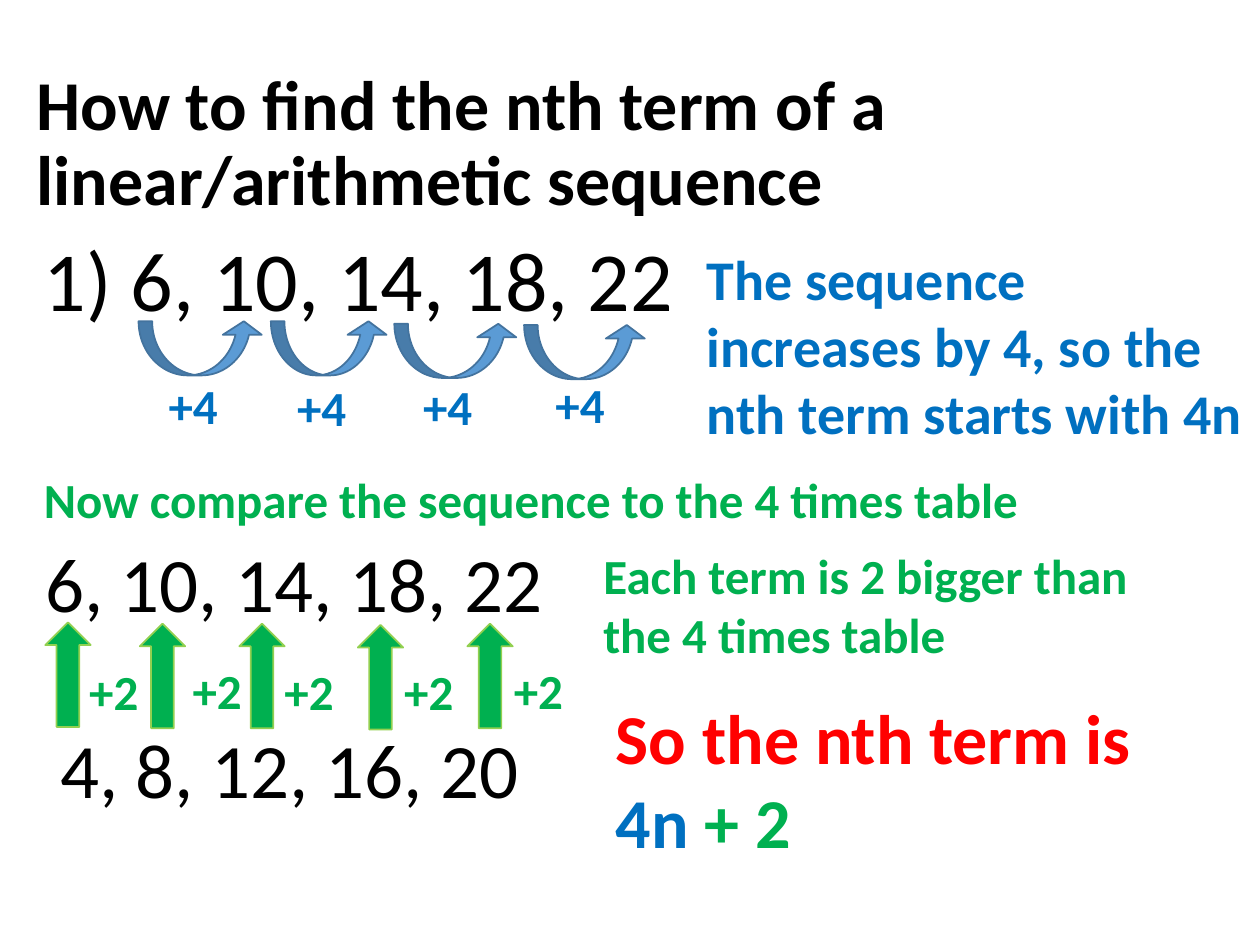
"""Build a slide on finding the nth term of a linear sequence."""
from pptx import Presentation, util as u
from pptx.dml.color import RGBColor
from pptx.enum import shapes, text

BLACK, BLUE, GREEN, RED = "000000", "0070C0", "00B050", "FF0000"
KIND = shapes.MSO_SHAPE


def paint(fmt, hue):
    """Set a fill or line format to a solid colour."""
    fill = getattr(fmt, "fill", fmt)
    fill.solid()
    fill.fore_color.rgb = RGBColor.from_string(hue)


def write(par, words, size=28, hue=GREEN, bold=True):
    """Add a formatted run to a paragraph."""
    run = par.add_run()
    run.text = words
    font = run.font
    font.name, font.size, font.bold = "Calibri", u.Pt(size), bold
    font.color.rgb = RGBColor.from_string(hue)


class Board:
    """Hold the style and the slide, on a grid of 100 by 75 cells."""

    def __init__(self, deck):
        """Set the page size and add a title-only slide."""
        deck.slide_width, deck.slide_height = u.Inches(10), u.Inches(7.5)
        self.cell = deck.slide_width / 100
        self.slide = deck.slides.add_slide(deck.slide_layouts[5])

    def span(self, *cells):
        """Turn grid cells into lengths."""
        return [u.Emu(round(c * self.cell)) for c in cells]

    def title(self, box, words, **style):
        """Place and format the title."""
        head = self.slide.shapes.title
        head.left, head.top, head.width, head.height = self.span(*box)
        frame = head.text_frame
        frame.word_wrap = True
        frame.auto_size = text.MSO_AUTO_SIZE.NONE
        frame.vertical_anchor = text.MSO_ANCHOR.MIDDLE
        par = frame.paragraphs[0]
        par.alignment, par.line_spacing = text.PP_ALIGN.LEFT, 0.9
        write(par, words, **style)

    def label(self, box, words, wrap=True, gap=None, **style):
        """Add a text box and return its frame."""
        frame = self.slide.shapes.add_textbox(*self.span(*box)).text_frame
        frame.word_wrap = wrap
        par = frame.paragraphs[0]
        par.line_spacing = gap
        write(par, words, **style)
        return frame

    def arrow(self, kind, box, fill, line, bends=()):
        """Add a block arrow."""
        item = self.slide.shapes.add_shape(kind, *self.span(*box))
        item.shadow.inherit = False
        for i, bend in enumerate(bends):
            item.adjustments[i] = bend
        paint(item, fill)
        paint(item.line, line)
        item.line.width = u.Pt(1)


def main():
    """Build and save the slide."""
    deck = Presentation()
    board = Board(deck)
    board.title((1.9, 4.3, 86.2, 14.5),
                "How to find the nth term of a linear/arithmetic sequence",
                size=40, hue=BLACK)
    board.label((2.5, 18.5, 86.2, 8.6), "1) 6, 10, 14, 18, 22",
                gap=0.9, size=48, hue=BLACK, bold=False)
    board.label((55.1, 18.9, 44.9, 17.2),
                "The sequence increases by 4, so the nth term starts with 4n",
                size=32, hue=BLUE)

    hops = [(11, 25.5, 9.9, 12.4, 29.3), (21.5, 25.5, 9.3, 22.6, 29.5),
            (31.3, 25.7, 9.8, 32.6, 29.4), (41.6, 25.8, 9.7, 43.1, 29.2)]
    for x, y, wide, left, top in hops:
        board.arrow(KIND.CURVED_UP_ARROW, (x, y, wide, 4.3),
                    "5B9BD5", "43739E", (0.25, 0.72, 0.25))
        board.label((left, top, 6.7, 5.7), "+4", hue=BLUE)

    board.label((2.5, 36.8, 85.1, 5.7),
                "Now compare the sequence to the 4 times table")
    rows = [((2.6, 42, 41.9, 8.4), "6, 10, 14, 18, 22"),
            ((3.8, 56.8, 38.8, 8.4), "4, 8, 12, 16, 20")]
    for box, words in rows:
        board.label(box, words, wrap=False, size=44, hue=BLACK, bold=False)

    lifts = [(3.6, 49.4, 6.1, 52), (11.1, 49.5, 14.3, 51.9),
             (19, 49.5, 21.6, 52), (28.4, 49.6, 31.1, 52),
             (37.1, 49.5, 39.8, 51.9)]
    for x, y, left, top in lifts:
        board.arrow(KIND.UP_ARROW, (x, y, 3.6, 8.3), GREEN, "92D050")
        board.label((left, top, 6.7, 5.7), "+2")

    board.label((46.9, 42.8, 44.7, 10.4),
                "Each term is 2 bigger than the 4 times table")
    frame = board.label((47.9, 54.6, 44.9, 14.5), "So the nth term is",
                        size=40, hue=RED)
    par = frame.add_paragraph()
    write(par, "4n ", size=40, hue=BLUE)
    write(par, "+ 2", size=40)
    deck.save("out.pptx")


if __name__ == "__main__":
    main()
